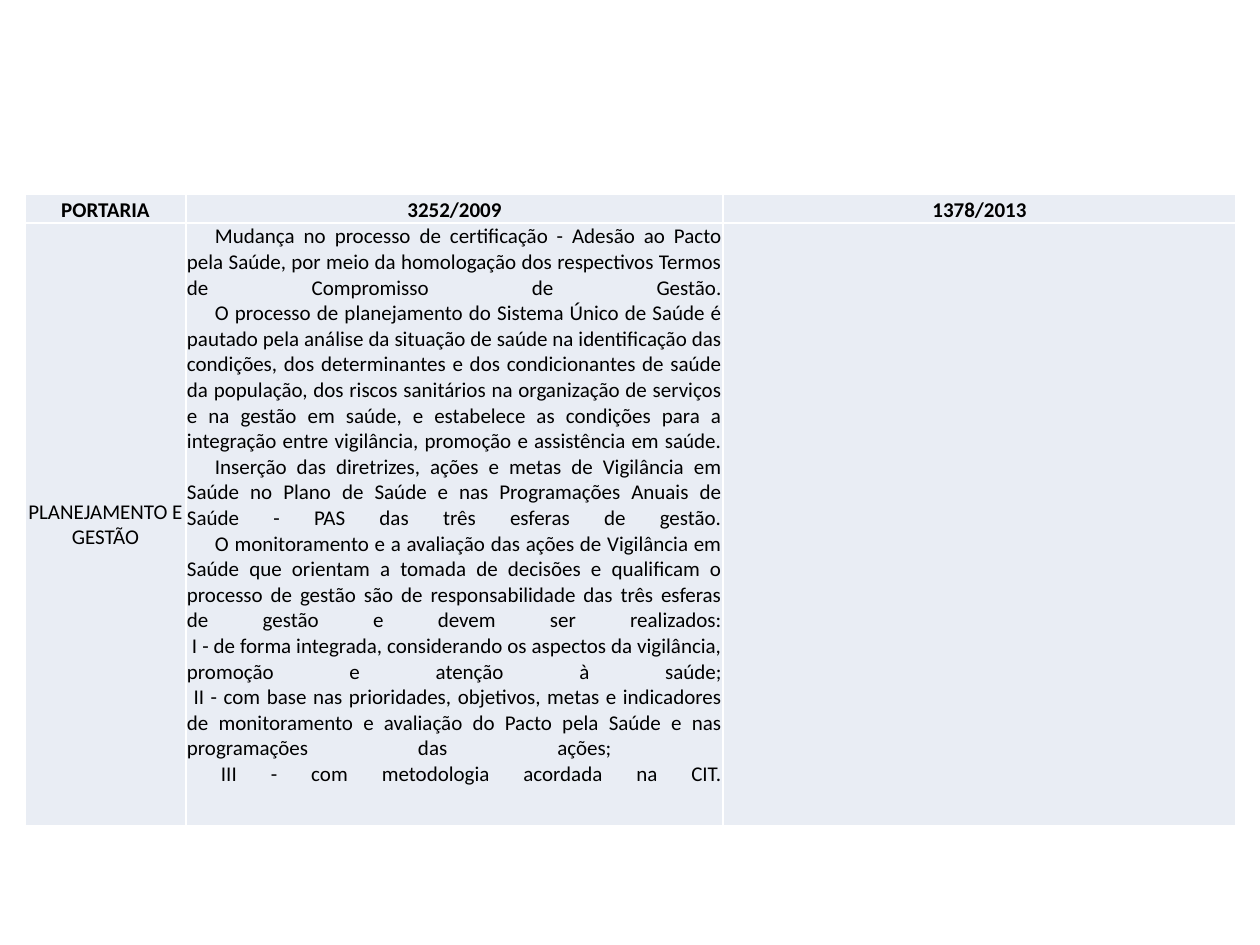
from lxml import etree
from pptx import Presentation
from pptx.dml.color import RGBColor
from pptx.enum.text import MSO_ANCHOR, PP_ALIGN
from pptx.oxml.ns import qn
from pptx.util import Pt

PX = 914400 / 126
BLACK = RGBColor(0x00, 0x00, 0x00)
WHITE = RGBColor(0xFF, 0xFF, 0xFF)
PALE_BLUE = RGBColor(0xE9, 0xED, 0xF4)
CENTER, JUSTIFY = PP_ALIGN.CENTER, PP_ALIGN.JUSTIFY
TOP, MIDDLE, BOTTOM = MSO_ANCHOR.TOP, MSO_ANCHOR.MIDDLE, MSO_ANCHOR.BOTTOM

HEADINGS = ["PORTARIA", "3252/2009", "1378/2013"]
TOPIC = "PLANEJAMENTO E GESTÃO"
RULES = [
    "\tMudança no processo de certificação - Adesão ao Pacto pela Saúde, por meio da "
    "homologação dos respectivos Termos de Compromisso de Gestão.",
    "\tO processo de planejamento do Sistema Único de Saúde é pautado pela análise da "
    "situação de saúde na identificação das condições, dos determinantes e dos "
    "condicionantes de saúde da população, dos riscos sanitários na organização de "
    "serviços e na gestão em saúde, e estabelece as condições para a integração entre "
    "vigilância, promoção e assistência em saúde.",
    "\tInserção das diretrizes, ações e metas de Vigilância em Saúde no Plano de Saúde e "
    "nas Programações Anuais de Saúde - PAS das três esferas de gestão.",
    "\tO monitoramento e a avaliação das ações de Vigilância em Saúde que orientam a "
    "tomada de decisões e qualificam o processo de gestão são de responsabilidade das "
    "três esferas de gestão e devem ser realizados:",
    " I - de forma integrada, considerando os aspectos da vigilância, promoção e atenção "
    "à saúde;",
    " II - com base nas prioridades, objetivos, metas e indicadores de monitoramento e "
    "avaliação do Pacto pela Saúde e nas programações das ações; ",
    " III - com metodologia acordada na CIT.",
]
COLUMN_WIDTHS = [161, 537, 513]
ROW_HEIGHTS = [29, 587]
INDENT = 28


def px(length):
    return round(length * PX)


def add_borders(cell):
    properties = cell._tc.get_or_add_tcPr()
    for index, side in enumerate(("lnL", "lnR", "lnT", "lnB")):
        line = etree.Element(qn(f"a:{side}"), w=str(Pt(1)))
        fill = etree.SubElement(line, qn("a:solidFill"))
        etree.SubElement(fill, qn("a:srgbClr"), val=str(WHITE))
        properties.insert(index, line)


def add_tab_stop(para, position):
    tabs = etree.SubElement(para._p.get_or_add_pPr(), qn("a:tabLst"))
    etree.SubElement(tabs, qn("a:tab"), pos=str(px(position)), algn="l")


def write_cell(cell, text, anchor, alignment, bold=False):
    cell.vertical_anchor = anchor
    para = cell.text_frame.paragraphs[0]
    para.text = text
    para.alignment = alignment
    if "\t" in text:
        add_tab_stop(para, INDENT)
    for span in para.runs:
        span.font.name = "Calibri"
        span.font.size = Pt(12)
        span.font.bold = bold
        span.font.color.rgb = BLACK


def add_comparison_table(page, left, top):
    frame = page.shapes.add_table(
        len(ROW_HEIGHTS), len(COLUMN_WIDTHS), px(left), px(top),
        px(sum(COLUMN_WIDTHS)), px(sum(ROW_HEIGHTS)))
    table = frame.table
    table.first_row = False
    table.horz_banding = False
    for column, width in zip(table.columns, COLUMN_WIDTHS):
        column.width = px(width)
    for row, height in zip(table.rows, ROW_HEIGHTS):
        row.height = px(height)
    for cell in table.iter_cells():
        cell.margin_left = cell.margin_right = cell.margin_top = px(1)
        cell.margin_bottom = 0
        cell.fill.solid()
        cell.fill.fore_color.rgb = PALE_BLUE
        add_borders(cell)
    for index, heading in enumerate(HEADINGS):
        write_cell(table.cell(0, index), heading, BOTTOM, CENTER, bold=True)
    write_cell(table.cell(1, 0), TOPIC, MIDDLE, CENTER)
    write_cell(table.cell(1, 1), "\v".join(RULES) + "\v", TOP, JUSTIFY)


def main():
    deck = Presentation()
    deck.slide_width = px(1260)
    deck.slide_height = px(945)
    page = deck.slides.add_slide(deck.slide_layouts[6])
    add_comparison_table(page, 25, 194)
    deck.save("out.pptx")


if __name__ == "__main__":
    main()
